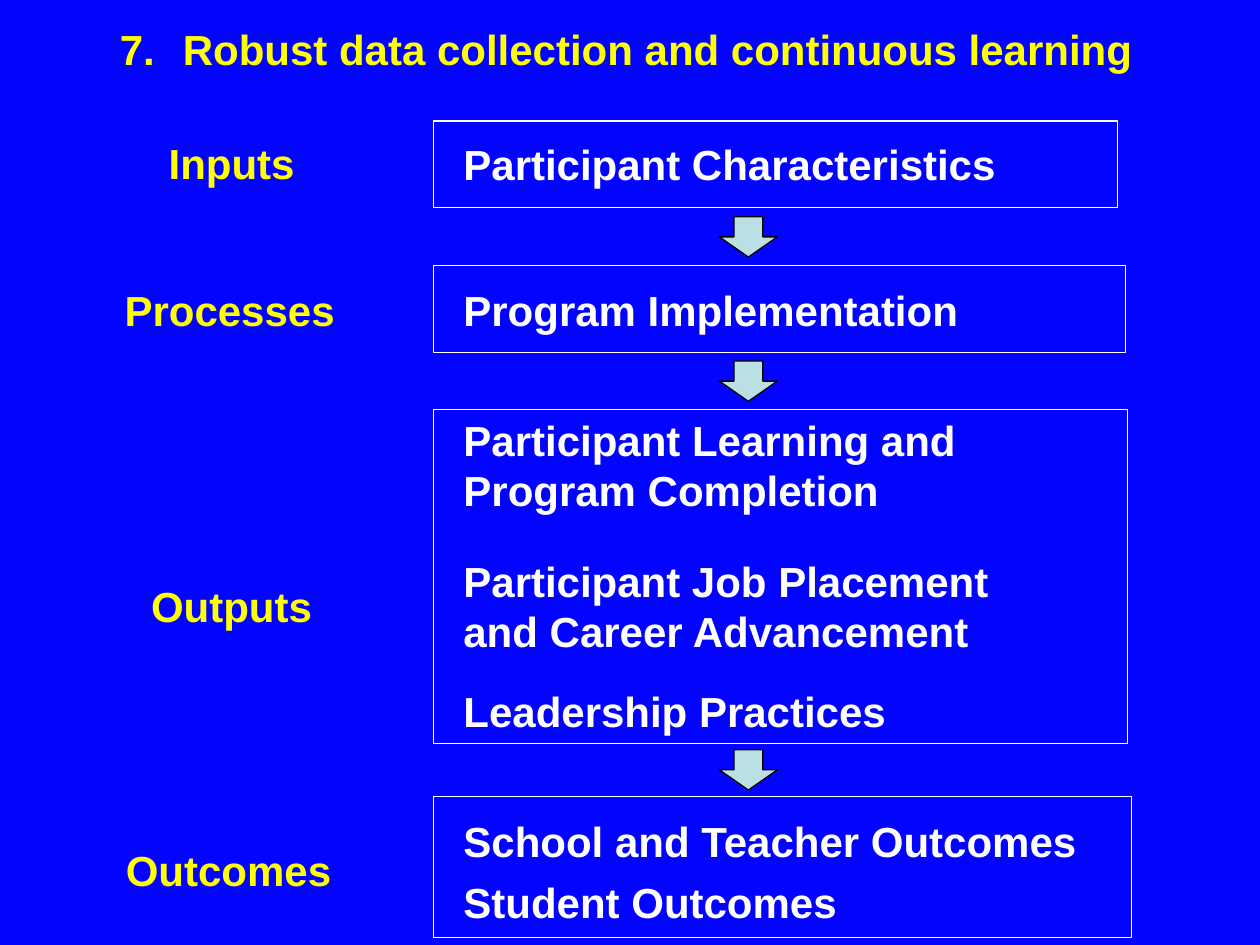
import pptx
import pptx.util
import pptx.dml.color
from pptx.enum.shapes import MSO_SHAPE
from pptx.enum.text import PP_ALIGN
from pptx.util import Inches, Pt

BLUE = pptx.dml.color.RGBColor(0x03, 0x04, 0xFF)
YELLOW = pptx.dml.color.RGBColor(0xFF, 0xFF, 0x00)
WHITE = pptx.dml.color.RGBColor(0xFF, 0xFF, 0xFF)
BLACK = pptx.dml.color.RGBColor(0x00, 0x00, 0x00)
PALE_TEAL = pptx.dml.color.RGBColor(0xBB, 0xE0, 0xE3)

TITLE = "7.\tRobust data collection and continuous learning"
STAGES = [
    {"label": ("Inputs", 1.24, 1.04, 1.21), "box": (0.96, 5.43, 0.69),
     "items": [("Participant Characteristics", 1.05, 4.47, 0.51)]},
    {"label": ("Processes", 0.89, 2.21, 1.89), "box": (2.11, 5.49, 0.69),
     "items": [("Program Implementation", 2.21, 4.17, 0.51)]},
    {"label": ("Outputs", 1.1, 4.56, 1.49), "box": (3.25, 5.51, 2.65),
     "items": [("Participant Learning and Program Completion", 3.24, 4.19, 0.94),
               ("Participant Job Placement and Career Advancement", 4.36, 4.46, 0.91),
               ("Leadership Practices", 5.39, 3.59, 0.51)]},
    {"label": ("Outcomes", 0.9, 6.65, 1.85), "box": (6.32, 5.54, 1.12),
     "items": [("School and Teacher Outcomes", 6.42, 5.11, 0.51),
               ("Student Outcomes", 6.91, 3.19, 0.51)]},
]
BOX_LEFT, ITEM_LEFT = 3.44, 3.58
LINE_HEIGHT = 0.51
ARROW_LEFT, ARROW_WIDTH, ARROW_HEIGHT = 5.71, 0.46, 0.32


def add_text(slide, text, left, top, width, height, color, align=PP_ALIGN.LEFT):
    frame = slide.shapes.add_textbox(
        Inches(left), Inches(top), Inches(width), Inches(height)).text_frame
    frame.word_wrap = True
    frame.text = text
    paragraph = frame.paragraphs[0]
    paragraph.alignment = align
    font = paragraph.runs[0].font
    font.name = "Arial"
    font.size = Pt(24)
    font.bold = True
    font.color.rgb = color


def add_outlined(slide, preset, left, top, width, height, line, fill=None):
    shape = slide.shapes.add_shape(
        preset, Inches(left), Inches(top), Inches(width), Inches(height))
    shape.shadow.inherit = False
    shape.line.color.rgb = line
    shape.line.width = Pt(0.75)
    if fill is None:
        shape.fill.background()
    else:
        shape.fill.solid()
        shape.fill.fore_color.rgb = fill


def main():
    deck = pptx.Presentation()
    deck.slide_width, deck.slide_height = Inches(10), Inches(7.5)
    slide = deck.slides.add_slide(deck.slide_layouts[6])
    slide.background.fill.solid()
    slide.background.fill.fore_color.rgb = BLUE

    add_text(slide, TITLE, 0.15, 0.14, 9.64, LINE_HEIGHT, YELLOW, PP_ALIGN.CENTER)

    for stage in STAGES:
        top, width, height = stage["box"]
        add_outlined(slide, MSO_SHAPE.RECTANGLE, BOX_LEFT, top, width, height, WHITE)
        add_text(slide, *stage["label"], LINE_HEIGHT, YELLOW)
        for item, item_top, item_width, item_height in stage["items"]:
            add_text(slide, item, ITEM_LEFT, item_top, item_width, item_height, WHITE)

    for upper, lower in zip(STAGES, STAGES[1:]):
        upper_top, _, upper_height = upper["box"]
        gap_middle = (upper_top + upper_height + lower["box"][0]) / 2
        add_outlined(slide, MSO_SHAPE.DOWN_ARROW, ARROW_LEFT,
                     gap_middle - ARROW_HEIGHT / 2, ARROW_WIDTH, ARROW_HEIGHT,
                     BLACK, PALE_TEAL)

    deck.save("out.pptx")


if __name__ == "__main__":
    main()
